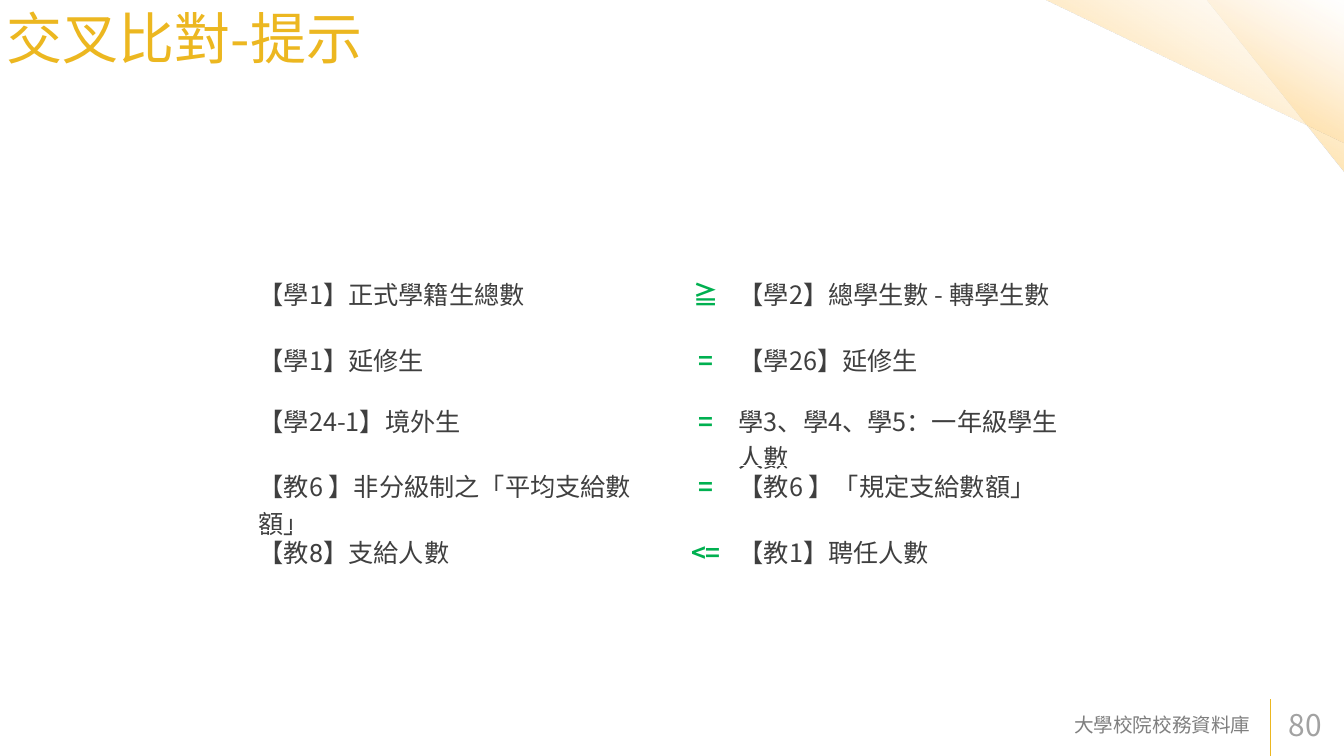
from lxml import etree
from pptx import Presentation
from pptx.dml.color import RGBColor
from pptx.enum import shapes, text
from pptx.oxml import parse_xml
from pptx.oxml.ns import nsdecls, qn
from pptx.util import Cm, Pt

GOLD = RGBColor(0xEC, 0xB7, 0x20)
DARK = RGBColor(0x3F, 0x3F, 0x3F)
GREEN = RGBColor(0x00, 0xB0, 0x50)
GREY = RGBColor(0x7F, 0x7F, 0x7F)
LIGHT_GREY = RGBColor(0xA2, 0xA2, 0xA2)
FONT = "Noto Sans CJK TC"
LEFT, CENTER, RIGHT = text.PP_ALIGN.LEFT, text.PP_ALIGN.CENTER, text.PP_ALIGN.RIGHT
TOP, MIDDLE = text.MSO_ANCHOR.TOP, text.MSO_ANCHOR.MIDDLE

# Gradient stops: position %, colour, opacity %
FADE = [(0, "FFD984", 100), (50, "FFD995", 43), (100, "FFF0DA", 0)]

CHECKS = [
    ("【學1】正式學籍生總數", "≧", "【學2】總學生數 - 轉學生數"),
    ("【學1】延修生", "=", "【學26】延修生"),
    ("【學24-1】境外生", "=", "學3、學4、學5：一年級學生人數"),
    ("【教6 】非分級制之「平均支給數額」", "=", "【教6 】「規定支給數額」"),
    ("【教8】支給人數", "<=", "【教1】聘任人數"),
]


def write(tf, words, size, color, bold=False, align=LEFT, latin=FONT):
    tf.word_wrap = True
    p = tf.paragraphs[0]
    p.alignment = align
    r = p.add_run()
    r.text = words
    r.font.size, r.font.bold, r.font.name = Pt(size), bold, latin
    r.font.color.rgb = color
    etree.SubElement(r._r.get_or_add_rPr(), qn("a:ea"), typeface=FONT)


def set_insets(box, x, y):
    box.margin_left = box.margin_right = Cm(x)
    box.margin_top = box.margin_bottom = Cm(y)


def add_corner_triangle(slide, left, top, width, height):
    """Fading right triangle with its right angle at the top right."""
    sp = slide.shapes.add_shape(shapes.MSO_SHAPE.RIGHT_TRIANGLE,
                                Cm(left), Cm(top), Cm(width), Cm(height))
    sp.rotation = 180
    sp.shadow.inherit = False
    sp.line.fill.background()
    stops = "".join(
        f'<a:gs pos="{pos * 1000}"><a:srgbClr val="{color}">'
        f'<a:alpha val="{alpha * 1000}"/></a:srgbClr></a:gs>'
        for pos, color, alpha in FADE)
    fill = parse_xml(f'<a:gradFill {nsdecls("a")} rotWithShape="1"><a:gsLst>{stops}'
                     '</a:gsLst><a:lin ang="7200000" scaled="0"/></a:gradFill>')
    sp._element.spPr.find(qn("a:prstGeom")).addnext(fill)


def add_title(slide, words, left, top, width, height):
    sp = slide.shapes.title
    sp.left, sp.top, sp.width, sp.height = Cm(left), Cm(top), Cm(width), Cm(height)
    tf = sp.text_frame
    tf.auto_size = text.MSO_AUTO_SIZE.NONE
    tf.vertical_anchor = TOP
    set_insets(tf, 0.25, 0.13)
    write(tf, words, 60, GOLD)


def add_label(slide, words, left, top, width, height, **fmt):
    tf = slide.shapes.add_textbox(Cm(left), Cm(top), Cm(width), Cm(height)).text_frame
    tf.vertical_anchor = MIDDLE
    set_insets(tf, 0.46, 0.23)
    write(tf, words, **fmt)


def add_footer(slide, left, top, width, height):
    """Source name, gold rule and page number along the bottom edge."""
    rule_x = left + width - 2.77
    rule = slide.shapes.add_connector(shapes.MSO_CONNECTOR.STRAIGHT,
                                      Cm(rule_x), Cm(top + height), Cm(rule_x), Cm(top))
    rule.line.color.rgb = GOLD
    rule.line.width = Pt(1)
    etree.SubElement(rule._element.spPr, qn("a:effectLst"))
    add_label(slide, "大學校院校務資料庫", left, top + 0.22, 21.59, 1.52,
              size=21, color=GREY, align=RIGHT)
    add_label(slide, "80", rule_x + 0.23, top + 0.22, 2.51, 1.52,
              size=32, color=LIGHT_GREY)


def add_checks(slide, left, top, widths, heights):
    frame = slide.shapes.add_table(len(heights), len(widths), Cm(left), Cm(top),
                                   Cm(sum(widths)), Cm(sum(heights)))
    table = frame.table
    table.first_row = table.horz_banding = False
    for column, width in zip(table.columns, widths):
        column.width = Cm(width)
    for row, height, values in zip(table.rows, heights, CHECKS):
        row.height = Cm(height)
        for i, (cell, words) in enumerate(zip(row.cells, values)):
            cell.fill.background()
            set_insets(cell, 0.18, 0.1)
            if i == 1:
                write(cell.text_frame, words, 27, GREEN, bold=True, align=CENTER)
            else:
                latin = "Roboto" if words.startswith("【教8】") else FONT
                write(cell.text_frame, words, 27, DARK, latin=latin)


def main():
    prs = Presentation()
    prs.slide_width, prs.slide_height = Cm(50.8), Cm(28.58)
    slide = prs.slides.add_slide(prs.slide_layouts[5])
    add_corner_triangle(slide, 45.62, 0, 5.18, 6.53)
    add_corner_triangle(slide, 39.47, 0, 11.38, 5.41)
    add_title(slide, "交叉比對-提示", 0, 0, 17.48, 8.33)
    add_footer(slide, 26.14, 26.42, 24.66, 2.16)
    add_checks(slide, 9.6, 10.31, [16.03, 2.11, 12.57], [2.29, 2.29, 2.49, 2.29, 2.29])
    prs.save("out.pptx")


if __name__ == "__main__":
    main()
